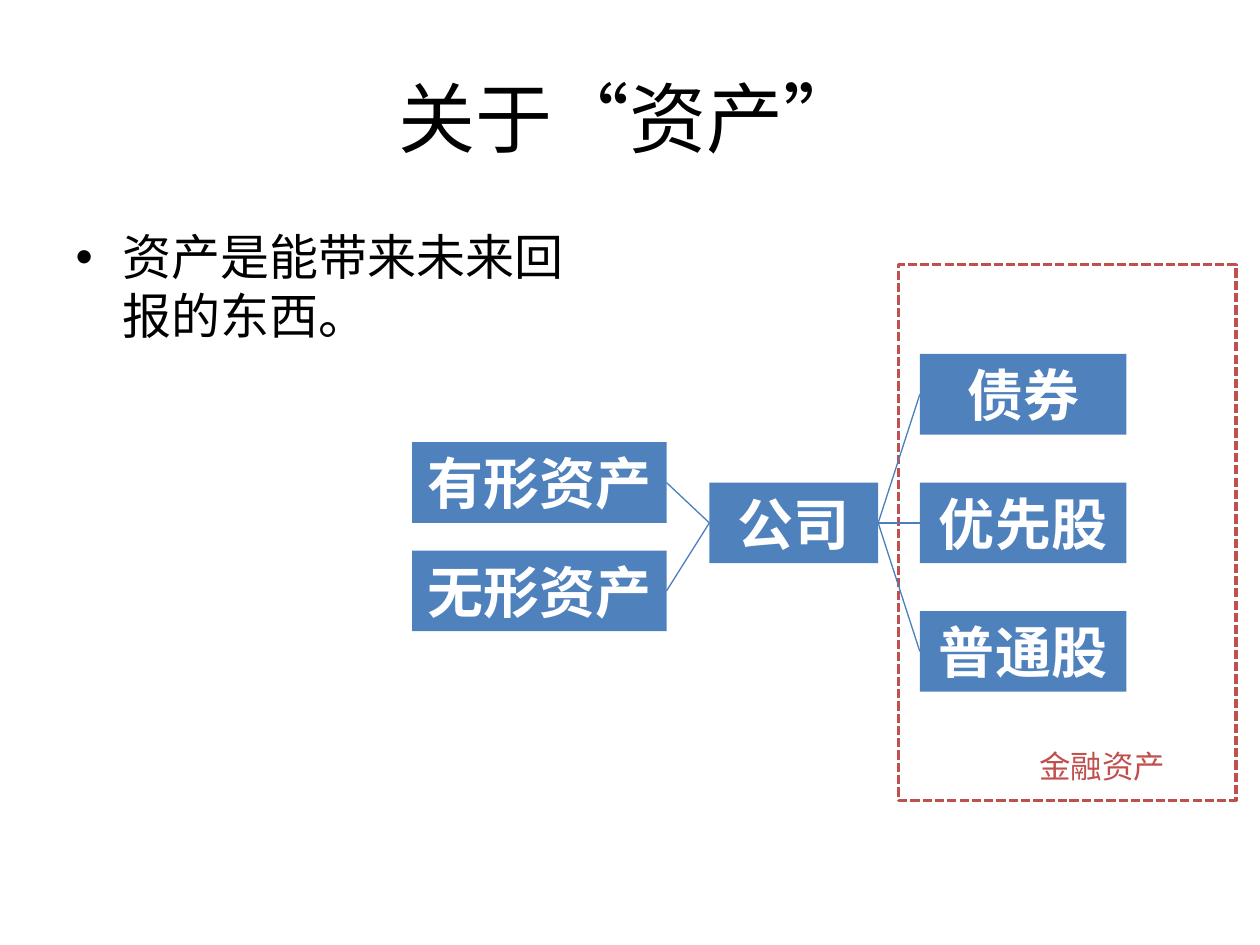
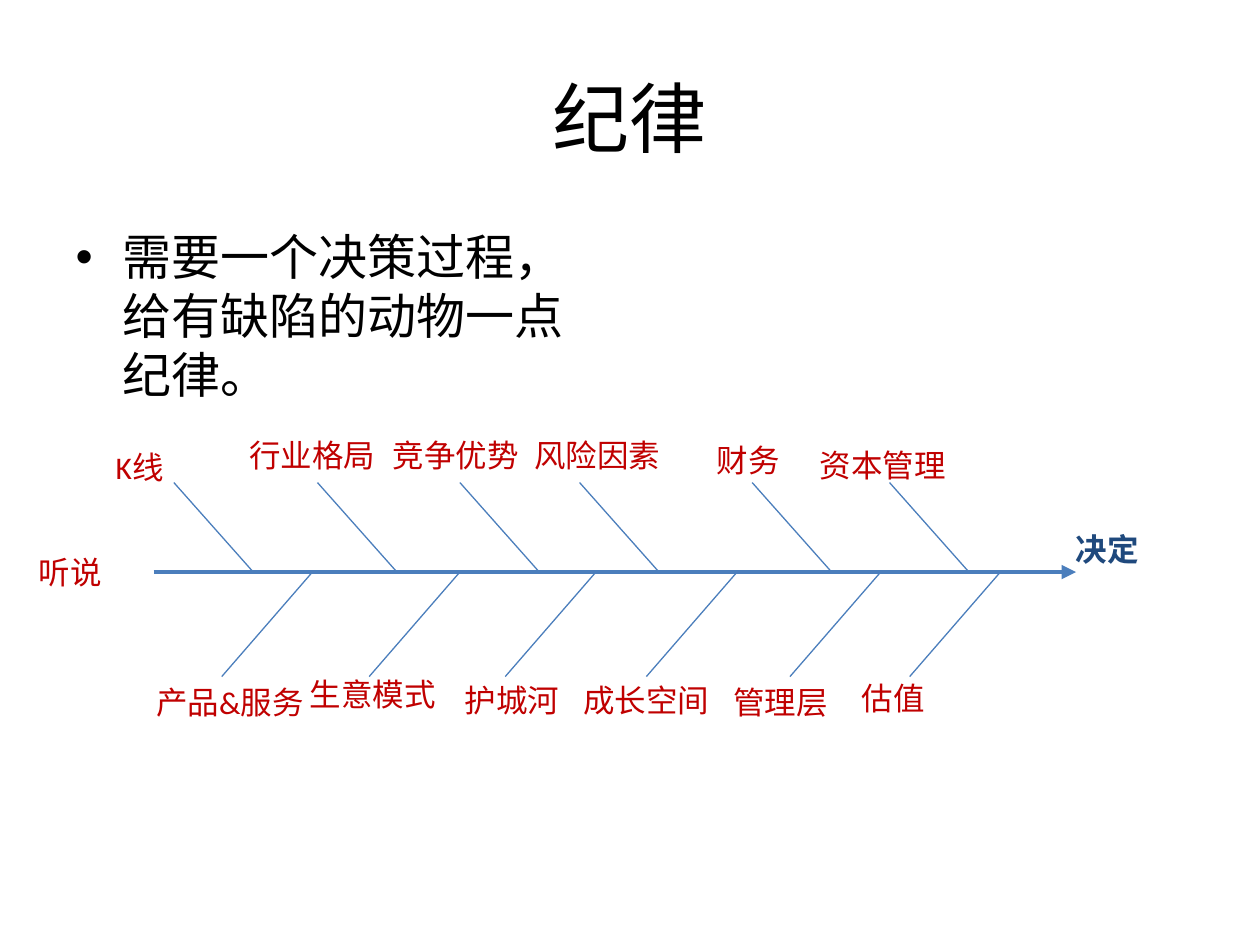
from lxml import etree
from pptx import Presentation, util as u
from pptx.dml.color import RGBColor
from pptx.enum import dml, lang, shapes, text
from pptx.oxml.ns import qn

COLORS = {
    "ink": "000000",
    "white": "FFFFFF",
    "box": "4F81BD",
    "line": "4B7EBC",
    "frame": "C0504D",
    "factor": "C00000",
    "decision": "1F497D",
}
FONT = "Calibri"
COLUMNS, ROWS = 100, 75
CELL = u.Inches(0.1)
LABEL_HEIGHT = 4
LEFT_SIDE, RIGHT_SIDE = 1, 3  # connection sites of a rectangle


def cells(*counts):
    """Turn counts of grid cells into lengths."""
    return [u.Emu(round(count * CELL)) for count in counts]


def color(name):
    return RGBColor.from_string(COLORS[name])


def write(shape, words, size, color_name, bold=False, align=None):
    paragraph = shape.text_frame.paragraphs[0]
    paragraph.text = words
    paragraph.alignment = align
    font = paragraph.font
    font.name, font.size, font.bold = FONT, u.Pt(size), bold
    font.color.rgb = color(color_name)
    font.language_id = lang.MSO_LANGUAGE_ID.SIMPLIFIED_CHINESE


def place(shape, *area):
    shape.left, shape.top, shape.width, shape.height = cells(*area)


def add_content_slide(presentation, title, point):
    slide = presentation.slides.add_slide(presentation.slide_layouts[1])
    heading, body = slide.placeholders
    place(heading, 5, 3, 90, 12.5)
    place(body, 5, 17.5, 44.2, 49.5)
    write(heading, title, 44, "ink", align=text.PP_ALIGN.CENTER)
    write(body, point, 28, "ink")
    return slide


def add_rectangle(slide, *area):
    rectangle = slide.shapes.add_shape(shapes.MSO_SHAPE.RECTANGLE, *cells(*area))
    rectangle.shadow.inherit = False
    return rectangle


def add_box(slide, words, left, top, width):
    box = add_rectangle(slide, left, top, width, 6.4)
    box.fill.solid()
    box.fill.fore_color.rgb = color("box")
    box.line.fill.background()
    write(box, words, 32, "white", bold=True, align=text.PP_ALIGN.CENTER)
    return box


def add_dashed_frame(slide, *area):
    frame = add_rectangle(slide, *area)
    frame.fill.background()
    frame.line.color.rgb = color("frame")
    frame.line.width = u.Pt(1.75)
    frame.line.dash_style = dml.MSO_LINE.SQUARE_DOT


def add_label(slide, words, left, top, width, color_name="factor", bold=False):
    label = slide.shapes.add_textbox(*cells(left, top, width, LABEL_HEIGHT))
    label.text_frame.word_wrap = True
    label.text_frame.auto_size = text.MSO_AUTO_SIZE.SHAPE_TO_FIT_TEXT
    write(label, words, 18, color_name, bold)


def add_line(slide, start=(0, 0), end=(0, 0), width=0.75, arrow=False):
    line = slide.shapes.add_connector(
        shapes.MSO_CONNECTOR.STRAIGHT, *cells(*start, *end))
    line.line.color.rgb = color("line")
    line.line.width = u.Pt(width)
    if arrow:
        etree.SubElement(line.line._get_or_add_ln(), qn("a:tailEnd"), type="triangle")
    etree.SubElement(line._element.spPr, qn("a:effectLst"))
    return line


def link(slide, left_box, right_box):
    line = add_line(slide)
    line.begin_connect(left_box, RIGHT_SIDE)
    line.end_connect(right_box, LEFT_SIDE)


def build_assets(presentation):
    slide = add_content_slide(
        presentation, "关于“资产”", "资产是能带来未来回报的东西。")
    company = add_box(slide, "公司", 56.3, 38.3, 13.4)
    holdings = [add_box(slide, words, 32.7, 35.1 + 8.6 * row, 20.2)
                for row, words in enumerate(["有形资产", "无形资产"])]
    claims = [add_box(slide, words, 73, 28.1 + 10.2 * row, 16.4)
              for row, words in enumerate(["债券", "优先股", "普通股"])]
    add_dashed_frame(slide, 71.3, 21, 26.8, 42.5)
    add_label(slide, "金融资产", 81.5, 58.8, 16.5, "frame")
    for holding in holdings:
        link(slide, holding, company)
    for claim in claims:
        link(slide, company, claim)


def build_discipline(presentation):
    slide = add_content_slide(
        presentation, "纪律", "需要一个决策过程，给有缺陷的动物一点纪律。")
    spine = 45.4
    add_line(slide, (12.2, spine), (85.4, spine), width=2.75, arrow=True)
    add_label(slide, "听说", 2.1, 43.4, 12.6)
    add_label(slide, "决定", 84.4, 41.6, 15, "decision", bold=True)

    # Each factor: words, label left, top and width, column of its bone's outer end
    upper_factors = [
        ("K线", 8.2, 35.1, 11.9, 13.8),
        ("行业格局", 18.8, 34.1, 12.5, 25.2),
        ("竞争优势", 30.2, 34.1, 12.6, 36.5),
        ("风险因素", 41.4, 34.1, 12.7, 46),
        ("财务", 55.9, 34.5, 7.7, 59.7),
        ("资本管理", 64.1, 34.9, 12.7, 70.6),
    ]
    lower_factors = [
        ("产品&服务", 11.4, 53.7, 14.8, 17.6),
        ("生意模式", 23.6, 53.1, 12.7, 29.3),
        ("护城河", 35.9, 53.6, 11, 40.1),
        ("成长空间", 45.3, 53.6, 12.7, 51.3),
        ("管理层", 57.2, 53.7, 12.7, 62.7),
        ("估值", 67.4, 53.4, 12.7, 72.2),
    ]
    for factors, run, rise in ((upper_factors, 6.3, -7.1), (lower_factors, 7.2, 8.3)):
        for words, left, top, width, tip in factors:
            add_line(slide, (tip, spine + rise), (tip + run, spine))
            add_label(slide, words, left, top, width)


def main():
    presentation = Presentation()
    presentation.slide_width, presentation.slide_height = cells(COLUMNS, ROWS)
    build_assets(presentation)
    build_discipline(presentation)
    presentation.save("out.pptx")


if __name__ == "__main__":
    main()
